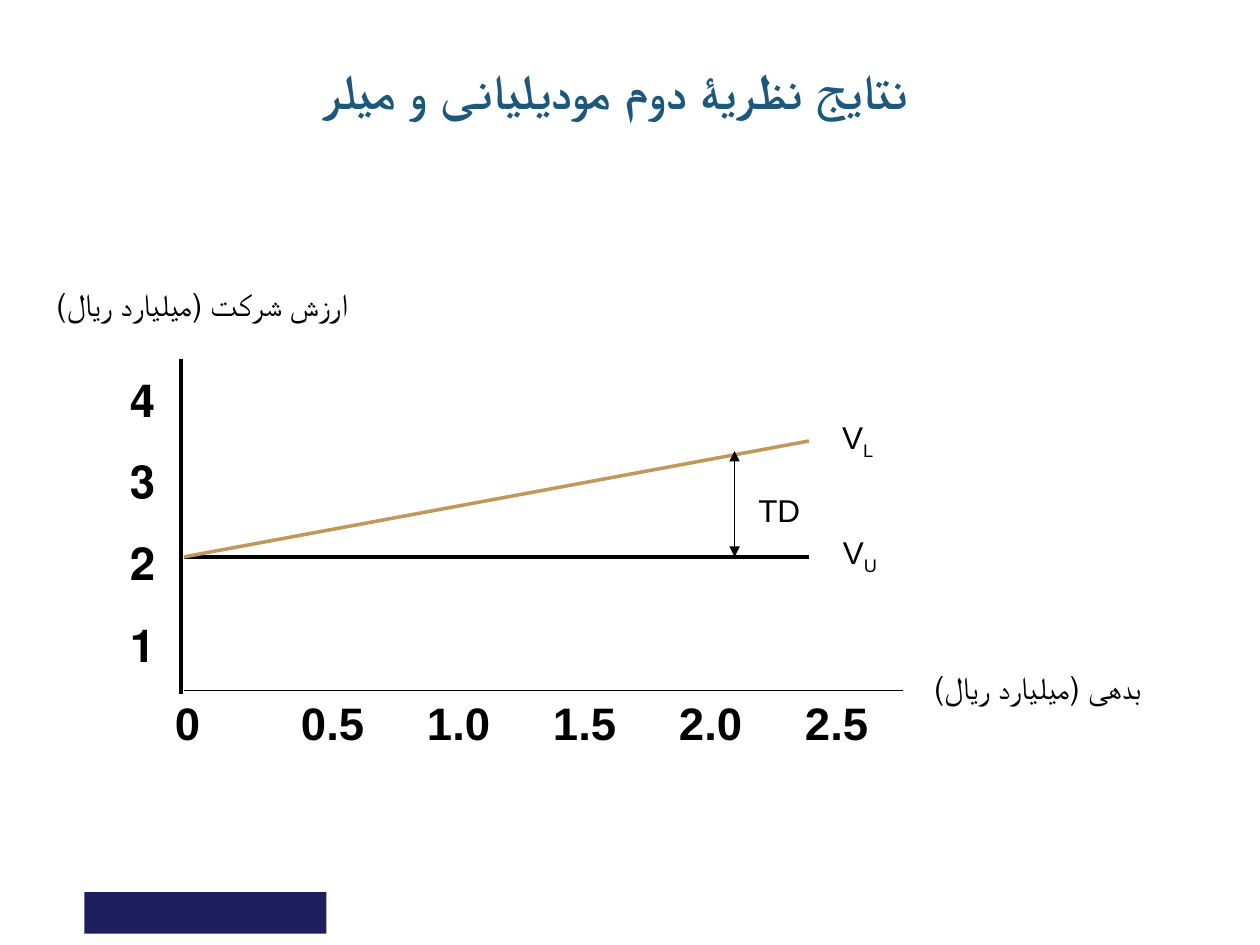
from dataclasses import dataclass

from lxml import etree
from pptx import Presentation
from pptx.dml.color import RGBColor
from pptx.enum.shapes import MSO_CONNECTOR, MSO_SHAPE
from pptx.enum.text import MSO_ANCHOR, PP_ALIGN
from pptx.oxml.ns import qn
from pptx.util import Inches, Pt

LEFT, CENTER, RIGHT = PP_ALIGN.LEFT, PP_ALIGN.CENTER, PP_ALIGN.RIGHT
BLACK = RGBColor(0x00, 0x00, 0x00)
TEAL = RGBColor(0x1B, 0x58, 0x7C)
TAN = RGBColor(0xC1, 0x98, 0x59)
NAVY = RGBColor(0x1D, 0x20, 0x5D)
FONT = "Arial"
TITLE_ONLY = 5

ORIGIN_X, AXIS_Y = 1.46, 5.48
UNLEVERED_Y, CURVE_END = 4.42, 6.42
GAP_X = 5.83


@dataclass
class Label:
    lines: list[str]
    left: float
    top: float
    width: float
    height: float
    size: int = 18
    bold: bool = False
    align: PP_ALIGN = RIGHT
    rtl: bool = True
    wrap: bool = True
    space_before: float = 0
    line_spacing: float = 1.0
    subscript: str = ""
    tab_stops: int = 0


@dataclass
class Line:
    start: tuple[float, float]
    end: tuple[float, float]
    color: RGBColor = BLACK
    width: float = 2
    arrows: bool = False


LABELS = [
    Label(["ارزش شرکت (میلیارد ریال)"], -0.17, 2.25, 3.55, 0.38,
          align=CENTER, line_spacing=0.9),
    Label(["بدهی (میلیارد ریال)"], 6.83, 5.29, 2.81, 0.38,
          align=CENTER, line_spacing=0.9),
    Label(["4", "3", "2", "1"], 0.56, 2.9, 0.77, 2.61,
          size=26, bold=True, space_before=15.6),
    Label(["0\t0.5\t1.0\t1.5\t2.0\t2.5"], 1.29, 5.47, 7.99, 0.53,
          size=26, bold=True, align=LEFT, rtl=False, tab_stops=5),
    Label(["V"], 6.57, 4.18, 0.49, 0.4, wrap=False, subscript="U"),
    Label(["V"], 6.57, 3.27, 0.46, 0.4, wrap=False, subscript="L"),
    Label(["TD"], 5.91, 3.85, 0.54, 0.4, wrap=False),
]

LINES = [
    Line((1.44, 2.85), (1.44, 5.51), width=2.25),
    Line((ORIGIN_X, AXIS_Y), (7.17, AXIS_Y), width=1),
    Line((ORIGIN_X, UNLEVERED_Y), (CURVE_END, UNLEVERED_Y)),
    Line((ORIGIN_X, UNLEVERED_Y), (CURVE_END, 3.5), color=TAN),
    Line((GAP_X, 3.58), (GAP_X, UNLEVERED_Y), width=1, arrows=True),
]


def format_paragraph(paragraph, size: int, color: RGBColor, bold: bool,
                     align: PP_ALIGN, rtl: bool) -> None:
    paragraph.alignment = align
    if rtl:
        paragraph._p.get_or_add_pPr().set("rtl", "1")
    font = paragraph.font
    font.name, font.size, font.bold = FONT, Pt(size), bold
    font.color.rgb = color


def add_tab_stops(paragraph, count: int) -> None:
    """Set left tab stops one inch apart."""
    tabs = etree.SubElement(paragraph._p.get_or_add_pPr(), qn("a:tabLst"))
    for inch in range(1, count + 1):
        etree.SubElement(tabs, qn("a:tab"), pos=str(Inches(inch)), algn="l")


def add_label(slide, label: Label) -> None:
    box = slide.shapes.add_textbox(Inches(label.left), Inches(label.top),
                                   Inches(label.width), Inches(label.height))
    frame = box.text_frame
    frame.word_wrap = label.wrap
    for index, line in enumerate(label.lines):
        paragraph = frame.add_paragraph() if index else frame.paragraphs[0]
        paragraph.add_run().text = line
        paragraph.line_spacing = label.line_spacing
        if index:
            paragraph.space_before = Pt(label.space_before)
        if label.tab_stops:
            add_tab_stops(paragraph, label.tab_stops)
        format_paragraph(paragraph, label.size, BLACK, label.bold,
                         label.align, label.rtl)
    if label.subscript:
        span = paragraph.add_run()
        span.text = label.subscript
        span._r.get_or_add_rPr().set("baseline", "-25000")


def add_line(slide, line: Line) -> None:
    points = [Inches(value) for value in (*line.start, *line.end)]
    connector = slide.shapes.add_connector(MSO_CONNECTOR.STRAIGHT, *points)
    connector.line.color.rgb = line.color
    connector.line.width = Pt(line.width)
    if line.arrows:
        outline = connector.line._get_or_add_ln()
        for tag in ("a:headEnd", "a:tailEnd"):
            etree.SubElement(outline, qn(tag), type="triangle")
    etree.SubElement(connector._element.spPr, qn("a:effectLst"))


def add_title(slide, text: str) -> None:
    title = slide.shapes.title
    title.left, title.top = Inches(0.33), Inches(0.25)
    title.width, title.height = Inches(9), Inches(0.92)
    frame = title.text_frame
    frame.text = text
    frame.vertical_anchor = MSO_ANCHOR.MIDDLE
    paragraph = frame.paragraphs[0]
    format_paragraph(paragraph, 28, TEAL, True, CENTER, True)
    span_format = paragraph.runs[0]._r.get_or_add_rPr()
    etree.SubElement(span_format, qn("a:cs"), typeface=FONT)


def add_footer_bar(slide) -> None:
    bar = slide.shapes.add_shape(MSO_SHAPE.RECTANGLE, Inches(0.67), Inches(7.08),
                                 Inches(1.92), Inches(0.33))
    bar.shadow.inherit = False
    bar.fill.solid()
    bar.fill.fore_color.rgb = NAVY
    bar.line.fill.background()


def main() -> None:
    deck = Presentation()
    deck.slide_width, deck.slide_height = Inches(10), Inches(7.5)
    slide = deck.slides.add_slide(deck.slide_layouts[TITLE_ONLY])
    add_footer_bar(slide)
    add_title(slide, "نتایج نظریۀ دوم مودیلیانی و میلر ")
    for label in LABELS:
        add_label(slide, label)
    for line in LINES:
        add_line(slide, line)
    deck.save("out.pptx")


if __name__ == "__main__":
    main()
